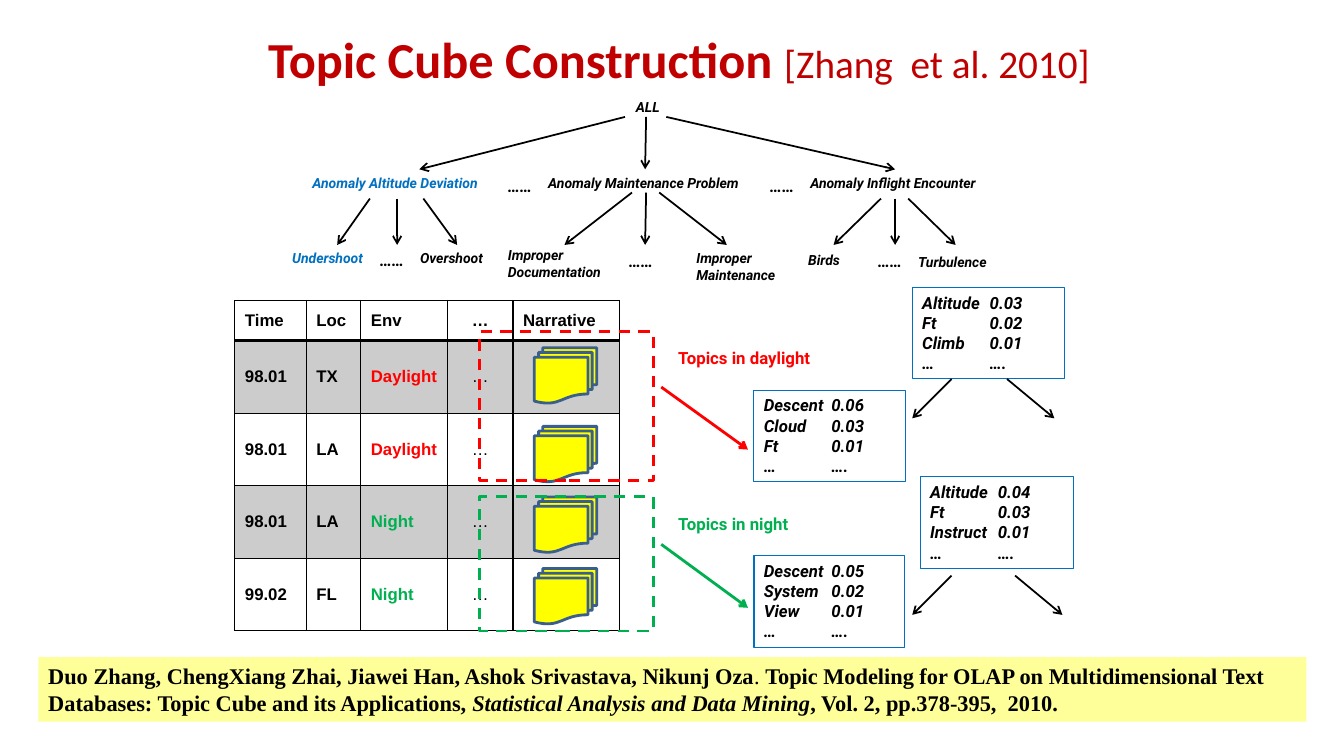
from dataclasses import dataclass

from lxml import etree
from pptx import Presentation
from pptx.dml.color import RGBColor
from pptx.enum.dml import MSO_LINE
from pptx.enum.shapes import MSO_CONNECTOR, MSO_SHAPE
from pptx.enum.text import MSO_ANCHOR, MSO_AUTO_SIZE, PP_ALIGN
from pptx.oxml.ns import qn
from pptx.util import Inches, Pt

RECTANGLE, DOCUMENTS = MSO_SHAPE.RECTANGLE, MSO_SHAPE.FLOWCHART_MULTIDOCUMENT
STRAIGHT, DASH = MSO_CONNECTOR.STRAIGHT, MSO_LINE.DASH
LEFT, CENTER = PP_ALIGN.LEFT, PP_ALIGN.CENTER
TOP, MIDDLE = MSO_ANCHOR.TOP, MSO_ANCHOR.MIDDLE
TOP_SITE = 0

BLACK, BLUE, RED, GREEN = "000000", "0070C0", "FF0000", "00B050"
DARK_RED, GRAY, YELLOW, PALE_YELLOW, NAVY = "C00000", "CCCCCC", "FFFF00", "FFFF99", "3A5F8C"
DOTS = "……"


def grid(count: float) -> int:
    """Length of a number of grid columns or rows, ten to the inch."""
    return Inches(count / 10)


@dataclass
class Area:
    column: float
    row: float
    width: float
    height: float

    def lengths(self) -> list[int]:
        return [grid(n) for n in (self.column, self.row, self.width, self.height)]


@dataclass
class Label:
    text: str
    area: Area
    color: str = BLACK
    size: float = 10
    italic: bool = True


@dataclass
class Fan:
    """Arrows from one row to another, as (start column, end column) pairs."""
    start_row: float
    end_row: float
    columns: list[tuple[float, float]]


@dataclass
class Card:
    area: Area
    topics: list[tuple[str, str]]


@dataclass
class Group:
    """One slice of the cube: its frame, caption and arrow."""
    color: str
    frame: Area
    caption: Label
    arrow: Fan


def rgb(color: str) -> RGBColor:
    return RGBColor.from_string(color)


def add_span(para, text: str, *, size: float = 12, color: str = BLACK, font: str = "Roboto",
             bold: bool = True, italic: bool = False) -> None:
    span = para.add_run()
    span.text = text
    span.font.name, span.font.size = font, Pt(size)
    span.font.bold, span.font.italic = bold, italic
    span.font.color.rgb = rgb(color)


def add_label(page, label: Label):
    box = page.shapes.add_textbox(*label.area.lengths())
    box.text_frame.word_wrap = True
    add_span(box.text_frame.paragraphs[0], label.text, size=label.size,
             color=label.color, italic=label.italic)
    return box


def add_box(page, area: Area, *, shape=RECTANGLE, fill: str = "", line: str = "",
            weight: float = 2, dash=None):
    box = page.shapes.add_shape(shape, *area.lengths())
    box.shadow.inherit = False
    box.fill.background()
    box.line.fill.background()
    if fill:
        box.fill.solid()
        box.fill.fore_color.rgb = rgb(fill)
    if line:
        box.line.color.rgb = rgb(line)
        box.line.width = Pt(weight)
        box.line.dash_style = dash
    box.text_frame.word_wrap = True
    box.text_frame.vertical_anchor = TOP
    box.text_frame.paragraphs[0].alignment = LEFT
    return box


def add_fan(page, fan: Fan, targets=(), *, color: str = BLACK, weight: float = 1.25) -> None:
    for start, end in fan.columns:
        arrow = page.shapes.add_connector(STRAIGHT, grid(start), grid(fan.start_row),
                                          grid(end), grid(fan.end_row))
        arrow.line.color.rgb = rgb(color)
        arrow.line.width = Pt(weight)
        properties = arrow.element.spPr
        etree.SubElement(properties.find(qn("a:ln")), qn("a:tailEnd"), type="arrow")
        etree.SubElement(properties, qn("a:effectLst"))
        for box in targets:
            middle = box.left + box.width // 2
            if max(abs(arrow.end_x - middle), abs(arrow.end_y - box.top)) < grid(0.2):
                arrow.end_connect(box, TOP_SITE)


def add_card(page, card: Card) -> None:
    box = add_box(page, card.area, line=BLUE, weight=0.75)
    for index, (word, weight) in enumerate(card.topics):
        para = box.text_frame.paragraphs[0] if index == 0 else box.text_frame.add_paragraph()
        para.alignment = LEFT
        stops = etree.SubElement(para._p.get_or_add_pPr(), qn("a:tabLst"))
        etree.SubElement(stops, qn("a:tab"), pos=str(grid(6.7)), algn="l")
        add_span(para, f"{word}\t{weight}", italic=True)


def add_border(cell, side: str, weight: float) -> None:
    line = etree.SubElement(cell._tc.get_or_add_tcPr(), qn(f"a:ln{side}"), w=str(Pt(weight)))
    fill = etree.SubElement(line, qn("a:solidFill"))
    etree.SubElement(fill, qn("a:srgbClr"), val=BLACK)


def add_records(page, area: Area, widths: list[float], heights: list[float],
                records: list[list[str]]) -> None:
    table = page.shapes.add_table(len(heights), len(widths), *area.lengths()).table
    table.first_row = table.horz_banding = False
    for column, width in zip(table.columns, widths):
        column.width = grid(width)
    for row, height in zip(table.rows, heights):
        row.height = grid(height)
    colors = {"Daylight": RED, "Night": GREEN}
    for r, record in enumerate(records):
        for c, text in enumerate(record):
            cell = table.cell(r, c)
            cell.vertical_anchor = MIDDLE
            for side, weight in {"L": 1, "R": 1, "T": 2 if r == 1 else 1,
                                 "B": 2 if r == 0 else 1}.items():
                add_border(cell, side, weight)
            if r % 2:
                cell.fill.solid()
                cell.fill.fore_color.rgb = rgb(GRAY)
            else:
                cell.fill.background()
            if text:
                para = cell.text_frame.paragraphs[0]
                para.alignment = CENTER if text == "…" else LEFT
                add_span(para, text, font="Arial", color=colors.get(text, BLACK),
                         bold=r == 0 or text != "…")


LABELS = [
    Label("ALL", Area(62.1, 9.3, 4.7, 2.7)),
    Label("Anomaly Altitude Deviation", Area(30, 16.8, 23.2, 2.7), BLUE),
    Label(DOTS, Area(49.4, 16.9, 6, 3), size=12),
    Label("Anomaly Maintenance Problem", Area(53.4, 16.8, 24, 2.7)),
    Label(DOTS, Area(75.4, 16.9, 5.7, 3), size=12),
    Label("Anomaly Inflight Encounter", Area(79.4, 16.8, 22, 2.7)),
    Label("Undershoot", Area(28, 24.3, 10.9, 2.7), BLUE),
    Label(DOTS, Area(36.7, 24.3, 5.4, 3), size=12),
    Label("Overshoot", Area(40.7, 24.3, 9.3, 2.7)),
    Label("Improper Documentation", Area(49.4, 24, 13.4, 4.5)),
    Label(DOTS, Area(61.4, 24.4, 5.7, 3), size=12),
    Label("Improper Maintenance", Area(68.1, 24.3, 11.3, 4.4)),
    Label("Birds", Area(79.2, 24.5, 6, 2.7)),
    Label(DOTS, Area(86.1, 24.4, 6, 3), size=12),
    Label("Turbulence", Area(90.1, 24.7, 10, 2.7)),
]
FANS = [
    Fan(11.6, 16.8, [(62, 41.6), (64.1, 64), (66.1, 88.8)]),
    Fan(19.7, 24.3, [(36.7, 33.4), (39.4, 39.3), (42, 45.4)]),
    Fan(19.1, 24.3, [(62.7, 56), (64.1, 64), (65.4, 72.1)]),
    Fan(19.7, 24.3, [(87.4, 82.7), (88.8, 88.8), (90.1, 94.8)]),
    Fan(37.6, 41.5, [(94.4, 90.5), (99.9, 104.6)]),
    Fan(57.1, 61, [(94.4, 90.5), (100.7, 105.4)]),
]
RECORDS = [
    ["Time", "Loc", "Env", "…", "Narrative"],
    ["98.01", "TX", "Daylight", "…", ""],
    ["98.01", "LA", "Daylight", "…", ""],
    ["98.01", "LA", "Night", "…", ""],
    ["99.02", "FL", "Night", "…", ""],
]
GROUPS = [
    Group(RED, Area(47.6, 32.9, 17.2, 14.8),
          Label("Topics in daylight", Area(66.3, 34, 18, 3), RED, 12, False),
          Fan(38.4, 44.6, [(65.6, 74.2)])),
    Group(GREEN, Area(47.6, 49.3, 17.2, 13.3),
          Label("Topics in night", Area(66.3, 50.5, 18, 3), GREEN, 12, False),
          Fan(54, 60.3, [(65.6, 74.2)])),
]
MORE = ("…", "….")
CARDS = [
    Card(Area(74.8, 38.7, 15, 9.1),
         [("Descent", "0.06"), ("Cloud", "0.03"), ("Ft", "0.01"), MORE]),
    Card(Area(90.5, 28.5, 15.1, 9.1),
         [("Altitude", "0.03"), ("Ft", "0.02"), ("Climb", "0.01"), MORE]),
    Card(Area(74.8, 55.1, 14.9, 9.1),
         [("Descent", "0.05"), ("System", "0.02"), ("View", "0.01"), MORE]),
    Card(Area(91.3, 47.3, 15.2, 9.1),
         [("Altitude", "0.04"), ("Ft", "0.03"), ("Instruct", "0.01"), MORE]),
]
CITATION = [
    ("Duo Zhang, ChengXiang Zhai, Jiawei Han, Ashok Srivastava, Nikunj Oza", True, False),
    (". ", False, False),
    ("Topic Modeling for OLAP on Multidimensional Text Databases: "
     "Topic Cube and its Applications, ", True, False),
    ("Statistical Analysis and Data Mining", True, True),
    (", Vol. 2, pp.378-395,  2010.", True, False),
]


def main() -> None:
    deck = Presentation()
    deck.slide_width, deck.slide_height = grid(133.33), grid(75)
    page = deck.slides.add_slide(deck.slide_layouts[5])

    # Title
    title = page.shapes.title
    title.left, title.top, title.width, title.height = Area(0.7, 0.4, 133.3, 10.8).lengths()
    title.text_frame.auto_size = MSO_AUTO_SIZE.NONE
    title.text_frame.vertical_anchor = MIDDLE
    heading = title.text_frame.paragraphs[0]
    heading.alignment = CENTER
    add_span(heading, "Topic Cube Construction ", size=36, color=DARK_RED, font="Calibri")
    add_span(heading, "[Zhang  et al. 2010]", size=28, color=DARK_RED, font="Calibri", bold=False)

    # Records with their narratives
    add_records(page, Area(23.3, 29.8, 38.2, 32.8), [7.1, 5.4, 8.6, 6.5, 10.6],
                [4] + [7.2] * 4, RECORDS)
    for row in (34.5, 42.3, 49.3, 56.4):
        add_box(page, Area(53, row, 6.2, 5.5), shape=DOCUMENTS, fill=YELLOW, line=NAVY)

    # Anomaly tree and topic drill-down
    nodes = [add_label(page, label) for label in LABELS]
    for group in GROUPS:
        add_box(page, group.frame, line=group.color, dash=DASH)
        add_label(page, group.caption)
        add_fan(page, group.arrow, color=group.color, weight=2)
    for card in CARDS:
        add_card(page, card)
    for fan in FANS:
        add_fan(page, fan, nodes)

    # Citation
    citation = add_box(page, Area(3.8, 65.2, 125.8, 6.4), fill=PALE_YELLOW)
    for text, bold, italic in CITATION:
        add_span(citation.text_frame.paragraphs[0], text, size=16, font="Times New Roman",
                 bold=bold, italic=italic)

    deck.save("out.pptx")


if __name__ == "__main__":
    main()
